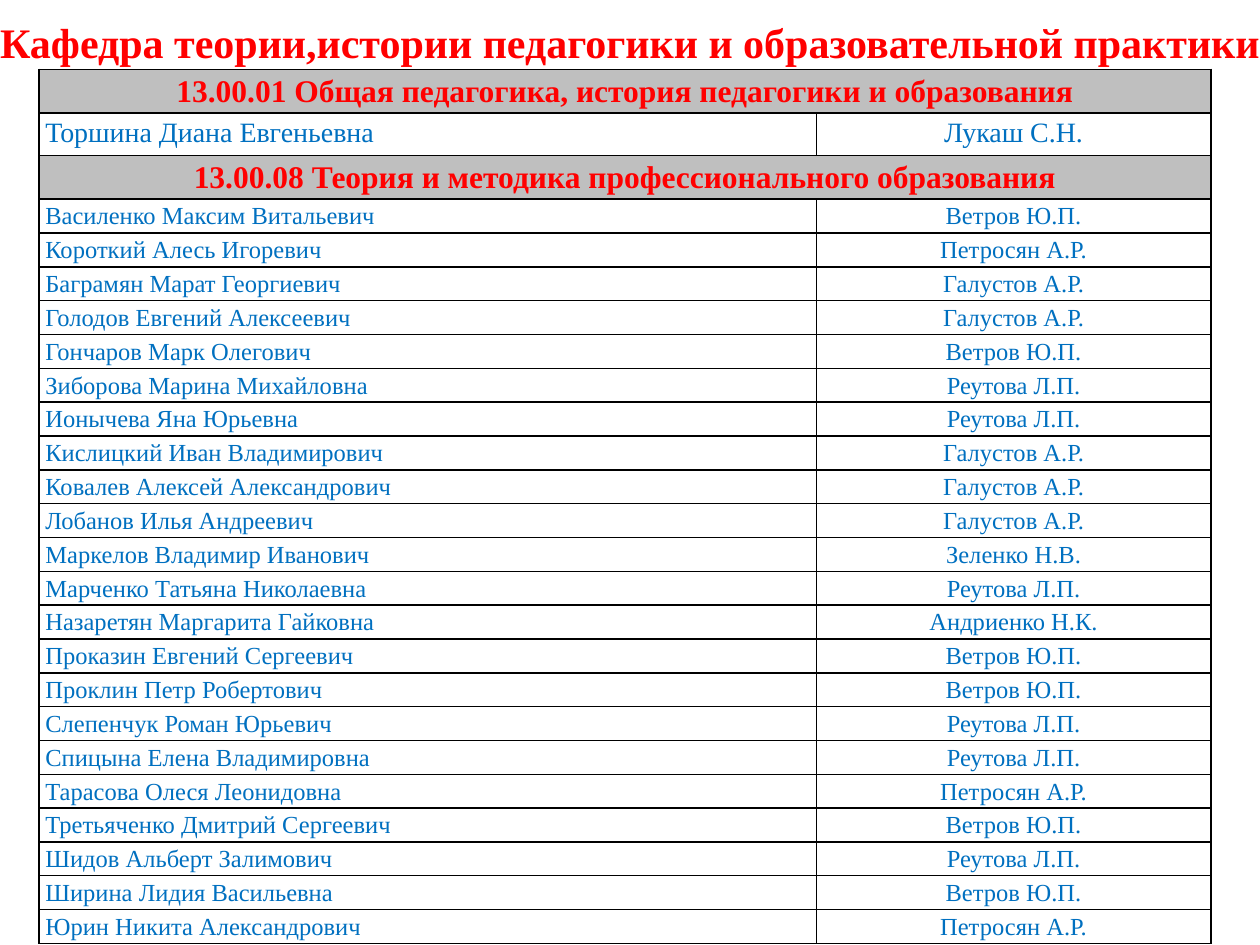
from lxml.etree import SubElement
from pptx import Presentation
from pptx.dml.color import RGBColor
from pptx.enum.text import MSO_ANCHOR as Anchor, MSO_AUTO_SIZE as AutoSize, PP_ALIGN as Align
from pptx.oxml.ns import qn
from pptx.util import Inches, Pt

RED = RGBColor(0xFF, 0x00, 0x00)
BLUE = RGBColor(0x00, 0x70, 0xC0)
GREY = RGBColor(0xBF, 0xBF, 0xBF)
BLACK = RGBColor(0x00, 0x00, 0x00)
FONT = "Times New Roman"

TITLE = "Кафедра теории,истории педагогики и образовательной практики"
TABLE_HEIGHT = 6.93
COLUMN_WIDTHS = (6.17, 3.13)
TALL_ROW = 0.34
SECTIONS = [
    ("13.00.01 Общая педагогика, история педагогики и образования", 16, [
        ("Торшина Диана Евгеньевна", "Лукаш С.Н."),
    ]),
    ("13.00.08 Теория и методика профессионального образования", 14, [
        ("Василенко Максим Витальевич", "Ветров Ю.П."),
        ("Короткий Алесь Игоревич", "Петросян А.Р."),
        ("Баграмян Марат Георгиевич", "Галустов А.Р."),
        ("Голодов Евгений Алексеевич", "Галустов А.Р."),
        ("Гончаров Марк Олегович", "Ветров Ю.П."),
        ("Зиборова Марина Михайловна", "Реутова Л.П."),
        ("Ионычева Яна Юрьевна", "Реутова Л.П."),
        ("Кислицкий Иван Владимирович", "Галустов А.Р."),
        ("Ковалев Алексей Александрович", "Галустов А.Р."),
        ("Лобанов Илья Андреевич", "Галустов А.Р."),
        ("Маркелов Владимир Иванович", "Зеленко Н.В."),
        ("Марченко Татьяна Николаевна", "Реутова Л.П."),
        ("Назаретян Маргарита Гайковна", "Андриенко Н.К."),
        ("Проказин Евгений Сергеевич", "Ветров Ю.П."),
        ("Проклин Петр Робертович", "Ветров Ю.П."),
        ("Слепенчук Роман Юрьевич", "Реутова Л.П."),
        ("Спицына Елена Владимировна", "Реутова Л.П."),
        ("Тарасова Олеся Леонидовна", "Петросян А.Р."),
        ("Третьяченко Дмитрий Сергеевич", "Ветров Ю.П."),
        ("Шидов Альберт Залимович", "Реутова Л.П."),
        ("Ширина Лидия Васильевна", "Ветров Ю.П."),
        ("Юрин Никита Александрович", "Петросян А.Р."),
    ]),
]


def add_span(para, text, size, color, bold=False):
    """Add one formatted run to a paragraph."""
    span = para.add_run()
    span.text = text
    span.font.name = FONT
    span.font.size = Pt(size)
    span.font.bold = bold
    span.font.color.rgb = color


def set_title(page):
    """Place and fill the title."""
    box = page.shapes.title
    box.left, box.top = Inches(-0.39), Inches(0.08)
    box.width, box.height = Inches(10.78), Inches(0.5)
    frame = box.text_frame
    frame.word_wrap = True
    frame.auto_size = AutoSize.SHAPE_TO_FIT_TEXT
    frame.vertical_anchor = Anchor.TOP
    para = frame.paragraphs[0]
    para.alignment = Align.CENTER
    add_span(para, TITLE, 24, RED, bold=True)


def set_borders(cell):
    """Draw a thin black line on every side of a cell."""
    properties = cell._tc.get_or_add_tcPr()
    for side in ("lnL", "lnR", "lnT", "lnB"):
        line = SubElement(properties, qn(f"a:{side}"), w=str(Pt(1)))
        fill = SubElement(line, qn("a:solidFill"))
        SubElement(fill, qn("a:srgbClr"), val=str(BLACK))


def style_cell(cell, fill=None):
    """Set the margins, borders and fill of a cell."""
    cell.margin_left = cell.margin_right = Inches(0.05)
    cell.margin_top = cell.margin_bottom = 0
    set_borders(cell)
    if fill is None:
        cell.fill.background()
    else:
        cell.fill.solid()
        cell.fill.fore_color.rgb = fill


def write_cell(cell, text, size, color, align, bold=False):
    """Write one line of text into a cell."""
    para = cell.text_frame.paragraphs[0]
    para.alignment = align
    para.line_spacing = 1.15
    add_span(para, text, size, color, bold)


def fill_heading(row, heading):
    """Merge a row into a grey section heading."""
    first, last = row.cells
    first.merge(last)
    for cell in (first, last):
        style_cell(cell, GREY)
    write_cell(first, heading, 18, RED, Align.CENTER, bold=True)


def fill_person(row, person, size):
    """Write a student and the supervisor into a row."""
    for cell, text, align in zip(row.cells, person, (Align.JUSTIFY, Align.CENTER)):
        style_cell(cell)
        write_cell(cell, text, size, BLUE, align)


def add_student_table(page):
    """Add the table of students grouped by speciality."""
    row_count = sum(1 + len(people) for _, _, people in SECTIONS)
    small_count = sum(len(people) for _, size, people in SECTIONS if size == 14)
    small_row = (TABLE_HEIGHT - TALL_ROW * (row_count - small_count)) / small_count
    table = page.shapes.add_table(
        row_count, len(COLUMN_WIDTHS), Inches(0.31), Inches(0.55),
        Inches(sum(COLUMN_WIDTHS)), Inches(TABLE_HEIGHT)).table
    table.first_row = table.horz_banding = False
    for column, width in zip(table.columns, COLUMN_WIDTHS):
        column.width = Inches(width)
    rows = iter(table.rows)
    for heading, size, people in SECTIONS:
        row = next(rows)
        row.height = Inches(TALL_ROW)
        fill_heading(row, heading)
        for person in people:
            row = next(rows)
            row.height = Inches(small_row if size == 14 else TALL_ROW)
            fill_person(row, person, size)


def main():
    """Build the slide and save the deck."""
    deck = Presentation()
    deck.slide_width, deck.slide_height = Inches(10), Inches(7.5)
    page = deck.slides.add_slide(deck.slide_layouts[5])
    set_title(page)
    add_student_table(page)
    deck.save("out.pptx")


if __name__ == "__main__":
    main()
